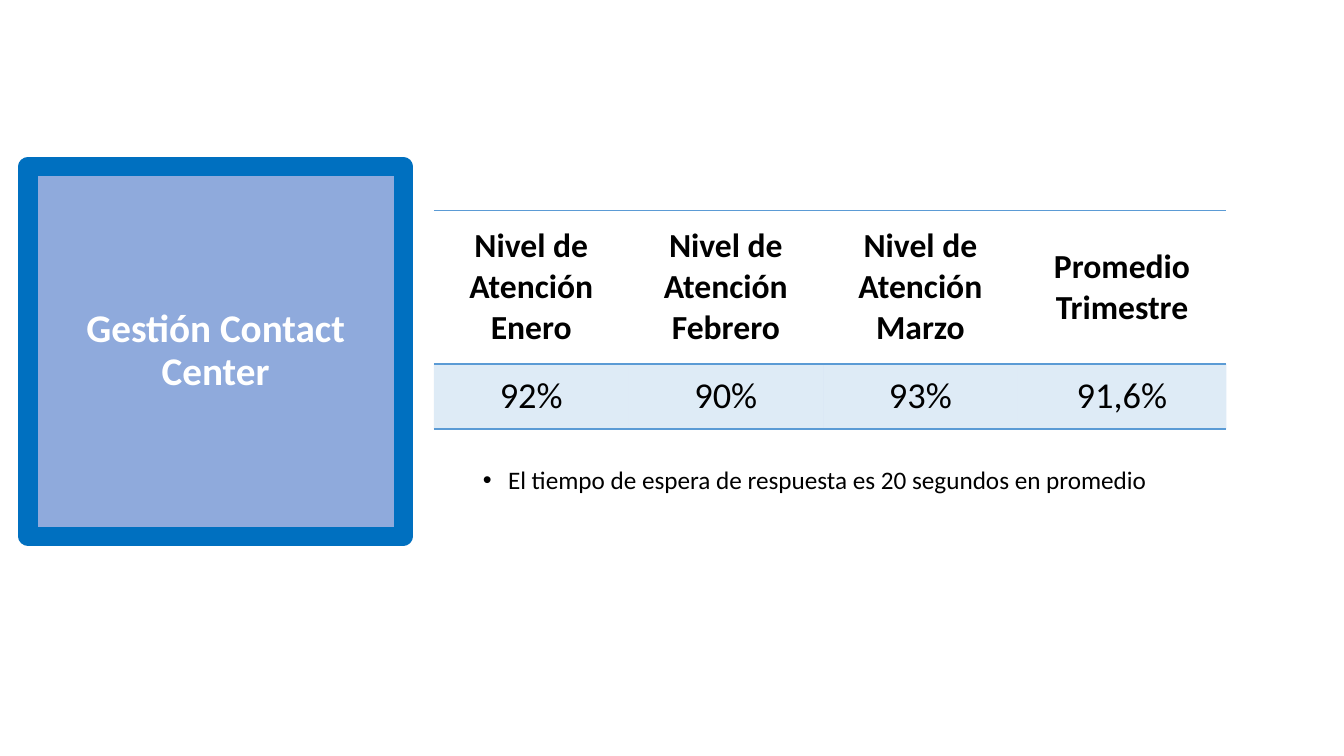
from pptx import Presentation
from pptx.dml.color import RGBColor as RGB
from pptx.enum.text import MSO_ANCHOR as Anchor, MSO_AUTO_SIZE as Auto, PP_ALIGN as Align
from pptx.oxml import parse_xml
from pptx.oxml.ns import nsdecls, qn
from pptx.util import Pt

WHITE = RGB(0xFF, 0xFF, 0xFF)
BLACK = RGB(0, 0, 0)
PALE = RGB(0x8F, 0xAA, 0xDC)
DEEP = RGB(0, 0x70, 0xC0)
BLUE = RGB(0x5B, 0x9B, 0xD5)


def style(para, size, color, bold=False):
    para.alignment = Align.CENTER
    font = para.font
    font.name, font.size, font.bold = "Calibri", Pt(size), bold
    font.color.rgb = color


def edge(cell, side, shown):
    paint = f'<a:solidFill><a:srgbClr val="{BLUE}"/></a:solidFill>' if shown else "<a:noFill/>"
    return parse_xml(f'<a:{side} {nsdecls("a")} w="{Pt(1)}">{paint}</a:{side}>')


deck = Presentation()
deck.slide_width, deck.slide_height = Pt(960), Pt(540)
slide = deck.slides.add_slide(deck.slide_layouts[1])

# Title panel
title = slide.shapes.title
title.left, title.top, title.width, title.height = Pt(20), Pt(119), Pt(268), Pt(264)
title.fill.solid()
title.fill.fore_color.rgb = PALE
title.line.color.rgb = DEEP
title.line.width = Pt(13.75)
title.line._get_or_add_ln().append(parse_xml(f'<a:round {nsdecls("a")}/>'))
frame = title.text_frame
frame.text = "Gestión Contact Center"
frame.auto_size = Auto.NONE
frame.vertical_anchor = Anchor.MIDDLE
para = frame.paragraphs[0]
para.line_spacing = 0.9
style(para, 28, WHITE, True)

# Note below the table
note = slide.placeholders[1]
note.left, note.top, note.width, note.height = Pt(299), Pt(300), Pt(566), Pt(82)
note.fill.solid()
note.fill.fore_color.rgb = WHITE
frame = note.text_frame
frame.text = "El tiempo de espera de respuesta es 20 segundos en promedio"
frame.auto_size = Auto.NONE
frame.vertical_anchor = Anchor.TOP
frame.margin_top = Pt(34)
para = frame.paragraphs[0]
para.line_spacing = 0.9
para.space_before = Pt(0)
props = para._p.get_or_add_pPr()
props.set("marL", str(Pt(18)))
props.set("indent", str(-Pt(18)))
props.append(parse_xml(f'<a:buFont {nsdecls("a")} typeface="Arial"/>'))
props.append(parse_xml(f'<a:buChar {nsdecls("a")} char="•"/>'))
style(para, 18, BLACK)

# Service level table
rows = [
    ["Nivel de Atención Enero", "Nivel de Atención Febrero",
     "Nivel de Atención Marzo", "Promedio Trimestre"],
    ["92%", "90%", "93%", "91,6%"],
]
table = slide.shapes.add_table(2, 4, Pt(310), Pt(150.5), Pt(566), Pt(156)).table
table.first_row = table.horz_banding = False
for col, width in zip(table.columns, [139, 139, 139, 149]):
    col.width = Pt(width)
for row, height in zip(table.rows, [109.5, 46.5]):
    row.height = Pt(height)

for r, texts in enumerate(rows):
    head = r == 0
    for c, text in enumerate(texts):
        cell = table.cell(r, c)
        cell.text = text
        cell.vertical_anchor = Anchor.MIDDLE
        cell.margin_left = cell.margin_right = Pt(10.8)
        cell.margin_top = cell.margin_bottom = Pt(5)
        style(cell.text_frame.paragraphs[0], 24 if head else 26, BLACK, head)
        props = cell._tc.get_or_add_tcPr()
        if head:
            cell.fill.background()
        else:
            cell.fill.solid()
            cell.fill.fore_color.rgb = BLUE
            tint = props.find(".//" + qn("a:srgbClr"))
            tint.append(parse_xml(f'<a:alpha {nsdecls("a")} val="20000"/>'))
        for i, side in enumerate(["lnL", "lnR", "lnT", "lnB"]):
            props.insert(i, edge(cell, side, side in ("lnT", "lnB")))

deck.save("out.pptx")
